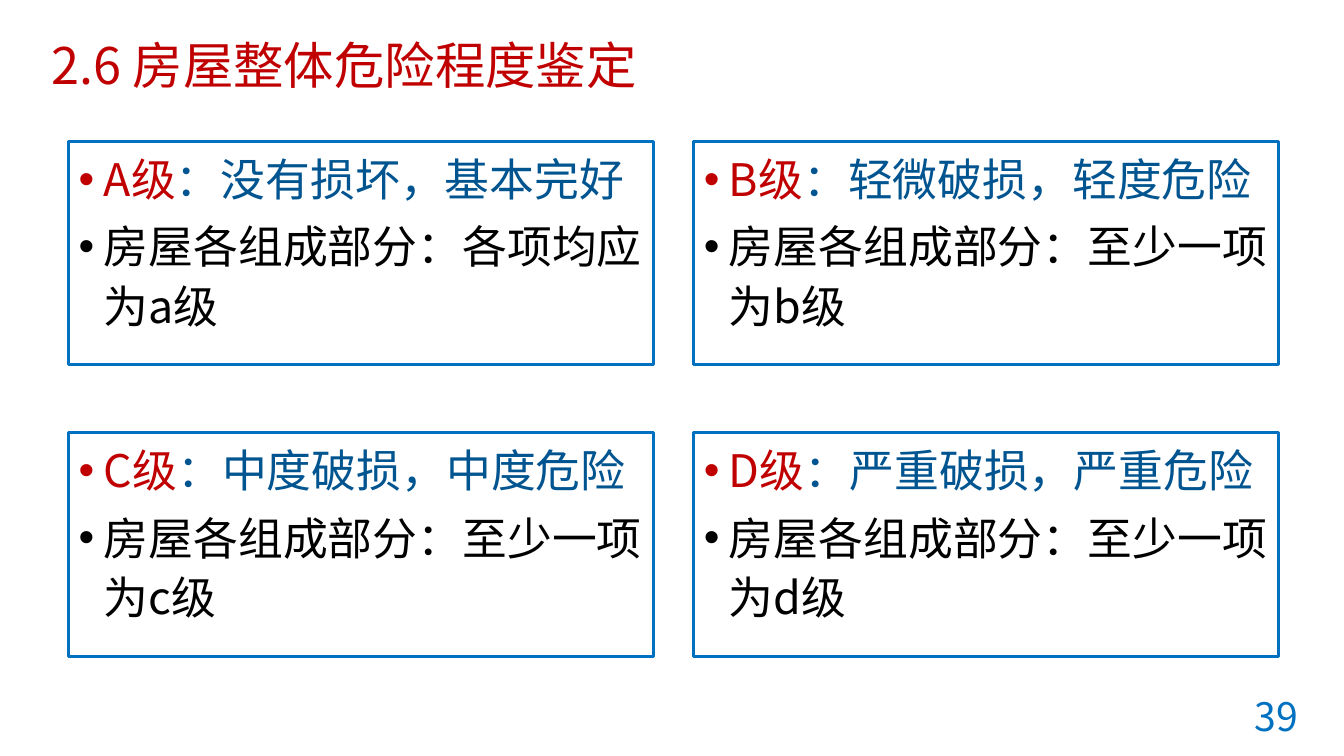
from lxml import etree
from pptx import Presentation
from pptx.dml.color import RGBColor
from pptx.enum.text import MSO_ANCHOR, MSO_AUTO_SIZE, PP_ALIGN
from pptx.oxml.ns import qn
from pptx.util import Inches, Pt

TOP, MIDDLE = MSO_ANCHOR.TOP, MSO_ANCHOR.MIDDLE
LEFT, RIGHT = PP_ALIGN.LEFT, PP_ALIGN.RIGHT
FIT, NO_FIT = MSO_AUTO_SIZE.TEXT_TO_FIT_SHAPE, MSO_AUTO_SIZE.NONE

RED = RGBColor(0xC0, 0x00, 0x00)
BLUE = RGBColor(0x00, 0x70, 0xC0)
NAVY = RGBColor(0x00, 0x54, 0x90)
BLACK = RGBColor(0x00, 0x00, 0x00)


class Deck:
    font = "Noto Sans CJK SC"
    margins = {"margin_left": Inches(0.1), "margin_right": Inches(0.1),
               "margin_top": Inches(0.05), "margin_bottom": Inches(0.05)}

    def __init__(self, width, height, layout):
        self.prs = Presentation()
        self.prs.slide_width, self.prs.slide_height = Inches(width), Inches(height)
        self.s = self.prs.slides.add_slide(self.prs.slide_layouts[layout])

    def apply(self, obj, **values):
        for name, value in values.items():
            setattr(obj, name, value)

    def place(self, sp, x, y, w, h):
        self.apply(sp, left=Inches(x), top=Inches(y), width=Inches(w), height=Inches(h))

    def frame(self, sp, anchor, fit=NO_FIT):
        tf = sp.text_frame
        self.apply(tf, word_wrap=True, auto_size=fit, vertical_anchor=anchor, **self.margins)
        return tf

    def run(self, p, text, size, color):
        r = p.add_run()
        r.text = text
        self.apply(r.font, name=self.font, size=Pt(size), bold=False)
        r.font.color.rgb = color
        etree.SubElement(r.font._element, qn("a:ea"), typeface=self.font)

    def title(self, text, box):
        sp = self.s.shapes.title
        self.place(sp, *box)
        p = self.frame(sp, MIDDLE).paragraphs[0]
        self.apply(p, alignment=LEFT, line_spacing=0.9)
        self.run(p, text, 36, RED)

    def bullet(self, p):
        pPr = p._p.get_or_add_pPr()
        indent = Inches(0.25)
        pPr.set("marL", str(indent))
        pPr.set("indent", str(-indent))
        etree.SubElement(pPr, qn("a:buFont"), typeface="Arial")
        etree.SubElement(pPr, qn("a:buChar"), char="•")

    def boxed_list(self, sp, items, box):
        self.place(sp, *box)
        sp.line.color.rgb = BLUE
        sp.line.width = Pt(2.25)
        tf = self.frame(sp, TOP, FIT)
        for i, runs in enumerate(items):
            p = tf.add_paragraph() if i else tf.paragraphs[0]
            self.bullet(p)
            self.apply(p, alignment=LEFT, line_spacing=1.1,
                       space_before=Pt(6 if i else 0), space_after=Pt(0))
            for text, color in runs:
                self.run(p, text, 32, color)

    def page_number(self, text, box):
        sp = self.s.shapes.add_textbox(*map(Inches, box))
        p = self.frame(sp, MIDDLE).paragraphs[0]
        p.alignment = RIGHT
        self.run(p, text, 28, BLUE)


def main():
    # The comparison layout offers a title and four bodies
    deck = Deck(13.33, 7.5, layout=4)
    deck.title("2.6 房屋整体危险程度鉴定", (0.41, 0.27, 12.34, 0.82))

    # Two by two grid of danger grades
    grades = [
        ("A级", "：没有损坏，基本完好", "各项均应为a级"),
        ("B级", "：轻微破损，轻度危险", "至少一项为b级"),
        ("C级", "：中度破损，中度危险", "至少一项为c级"),
        ("D级", "：严重破损，严重危险", "至少一项为d级"),
    ]
    bodies = list(deck.s.placeholders)[1:]
    for i, (sp, (grade, damage, rule)) in enumerate(zip(bodies, grades)):
        row, col = divmod(i, 2)
        items = [[(grade, RED), (damage, NAVY)],
                 [("房屋各组成部分：" + rule, BLACK)]]
        deck.boxed_list(sp, items, (0.68 + col * 6.2, 1.4 + row * 2.89, 5.8, 2.22))

    # Page number
    deck.page_number("39", (11.99, 6.87, 0.98, 0.47))
    deck.prs.save("out.pptx")


if __name__ == "__main__":
    main()
